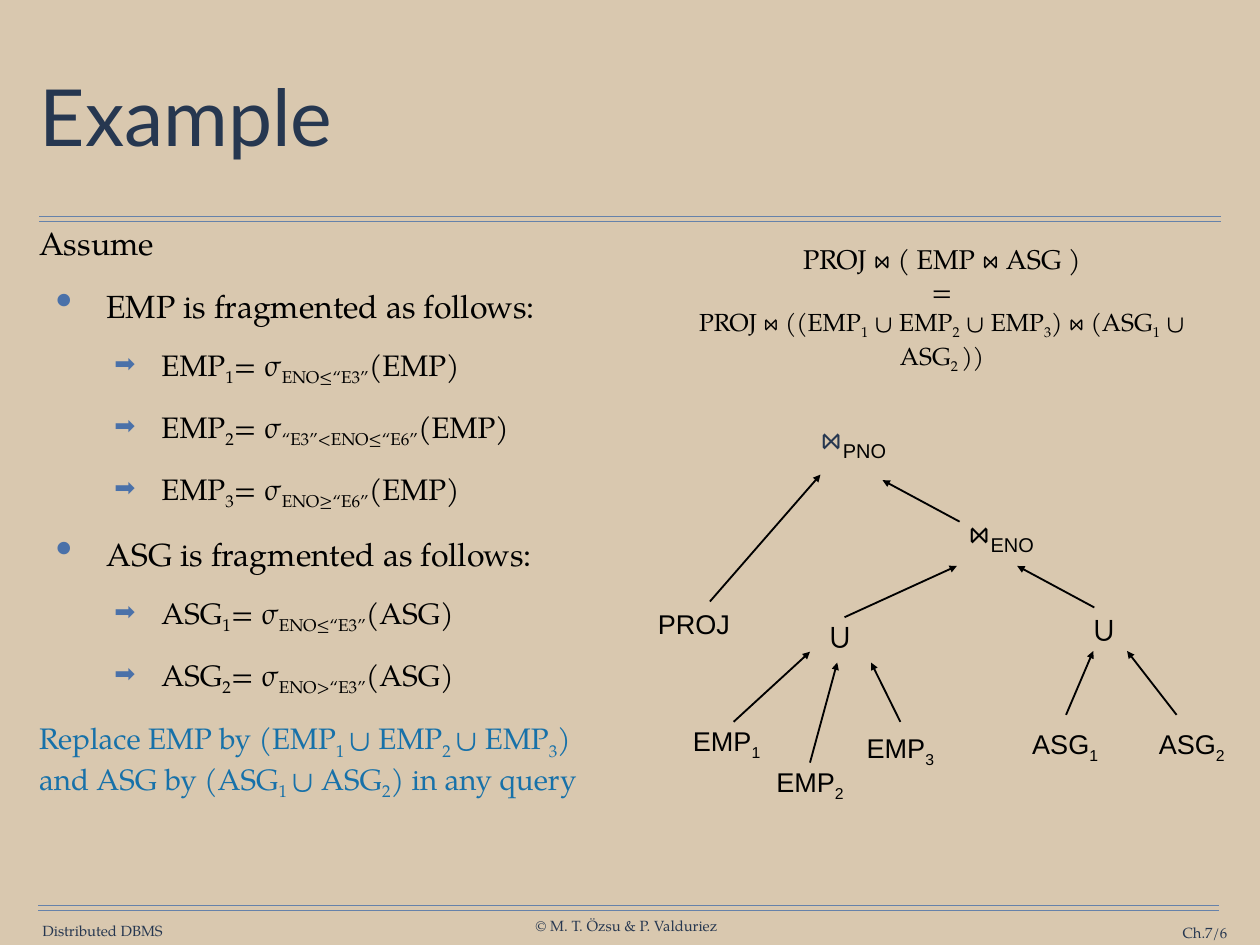
"""Build the slide on replacing relations by their fragments in a join query."""
from dataclasses import dataclass

from lxml import etree
from pptx import Presentation
from pptx.dml.color import RGBColor
from pptx.enum.shapes import MSO_CONNECTOR
from pptx.enum.text import MSO_ANCHOR, PP_ALIGN
from pptx.oxml.ns import qn
from pptx.util import Cm, Pt

LINE = MSO_CONNECTOR.STRAIGHT
TOP, MID = MSO_ANCHOR.TOP, MSO_ANCHOR.MIDDLE
LEFT, CENTER, RIGHT = PP_ALIGN.LEFT, PP_ALIGN.CENTER, PP_ALIGN.RIGHT


@dataclass(frozen=True)
class Theme:
    sand: str = "D9C8AF"
    navy: str = "263750"
    black: str = "000000"
    blue: str = "1771A9"
    mark: str = "4A71A9"
    rule: str = "6682AA"
    serif: str = "TeX Gyre Pagella"
    sans: str = "Arial"
    head: str = "Lato"
    title: int = 64
    join: int = 28
    body: int = 26
    item: int = 24
    label: int = 22
    small: int = 20
    foot: int = 12


theme = Theme()
deck = Presentation()
deck.slide_width, deck.slide_height = Cm(36.12), Cm(27.1)
slide = deck.slides.add_slide(deck.slide_layouts[6])
slide.background.fill.solid()
slide.background.fill.fore_color.rgb = RGBColor.from_string(theme.sand)


def add_box(x, y, w, h, pad=(0, 0), wrap=False, anchor=TOP):
    """Add a text box and return its frame."""
    frame = slide.shapes.add_textbox(Cm(x), Cm(y), Cm(w), Cm(h)).text_frame
    frame.margin_left = frame.margin_right = Cm(pad[0])
    frame.margin_top = frame.margin_bottom = Cm(pad[1])
    frame.word_wrap, frame.vertical_anchor = wrap, anchor
    return frame


def write(frame, text, size, font=theme.serif, color=theme.black, align=LEFT,
          space=None, before=0, after=0, bullet=None, sub=None):
    """Add a paragraph; parts between tildes are subscripts."""
    first = not frame.text
    para = frame.paragraphs[0] if first else frame.add_paragraph()
    para.alignment, para.line_spacing = align, space
    para.space_before, para.space_after = Pt(0 if first else before), Pt(after)
    if bullet:
        char, scale, left, hang = bullet
        props = para._p.get_or_add_pPr()
        props.set("marL", str(Cm(left)))
        props.set("indent", str(-Cm(hang)))
        tint = etree.SubElement(props, qn("a:buClr"))
        etree.SubElement(tint, qn("a:srgbClr"), val=theme.mark)
        etree.SubElement(props, qn("a:buSzPct"), val=str(scale * 1000))
        etree.SubElement(props, qn("a:buChar"), char=char)
    for i, part in enumerate(text.split("~")):
        if part:
            run = para.add_run()
            run.text = part
            face, tone = sub if sub and i % 2 else (font, color)
            run.font.name, run.font.size = face, Pt(size)
            run.font.color.rgb = RGBColor.from_string(tone)
            if i % 2:
                run._r.get_or_add_rPr().set("baseline", "-25000")


rules = [(x1, y, x2, y) for x1, x2, top in [(1.12, 35, 6.2), (1.09, 34.95, 25.96)]
         for y in (top, top + 0.15)]
arrows = [
    (27.51, 14.96, 25.3, 13.77),
    (31.37, 17.42, 29.16, 16.23),
    (24.21, 17.7, 27.43, 16.23),
    (20.35, 17.25, 23.52, 13.61),
    (23.22, 21.87, 24, 19),
    (21.03, 20.7, 23.22, 18.69),
    (25.81, 20.7, 24.97, 19),
    (33.73, 20.5, 32.31, 18.67),
    (30.56, 20.5, 31.34, 18.67),
]
for lines, color, width, tip in [(rules, theme.rule, 1, "none"),
                                 (arrows, theme.black, 1.5, "triangle")]:
    for ends in lines:
        link = slide.shapes.add_connector(LINE, *map(Cm, ends))
        link.line.color.rgb = RGBColor.from_string(color)
        link.line.width = Pt(width)
        etree.SubElement(link.line._get_or_add_ln(), qn("a:tailEnd"), type=tip)
        etree.SubElement(link._element.spPr, qn("a:effectLst"))

for text, x, y, w, align in [
    ("Distributed DBMS", 1.19, 26.44, 3.51, CENTER),
    ("© M. T. Özsu & P. Valduriez", 15.32, 26.29, 5.28, CENTER),
    ("Ch.7/6", 31.27, 26.49, 3.91, RIGHT),
]:
    foot = add_box(x, y, w, 0.51, wrap=align == RIGHT, anchor=MID)
    write(foot, text, theme.foot, color=theme.navy, align=align)

title = add_box(0.99, 1.24, 34.14, 4.47, (0.15, 0.15), True, MID)
write(title, "Example", theme.title, theme.head, theme.navy, space=0.9)

body = add_box(0.97, 6.15, 16.71, 19.3, (0.15, 0.15), True)
write(body, "Assume", theme.body, space=Pt(34.1), after=8.5)
for name, parts in [
    ("EMP", ["ENO≤“E3”", "“E3”<ENO≤“E6”", "ENO≥“E6”"]),
    ("ASG", ["ENO≤“E3”", "ENO>“E3”"]),
]:
    write(body, f"{name} is fragmented as follows:", theme.body,
          before=12, after=7.1, bullet=("•", 150, 1.93, 1.45))
    for n, test in enumerate(parts, 1):
        write(body, f"{name}~{n}~= σ~{test}~({name})", theme.item, space=Pt(31.3),
              before=12, after=7.1, bullet=("➡", 85, 3.51, 1.35))
write(body, "Replace EMP by (EMP~1 ~∪ EMP~2 ~∪ EMP~3~) and ASG by "
      "(ASG~1 ~∪ ASG~2~) in any query", theme.item, color=theme.blue, before=12)

query = add_box(18.47, 6.81, 17.07, 3, (0.8, 0.13), True)
for text, size in [
    ("PROJ ⋈ ( EMP ⋈ ASG )", theme.label),
    ("=", theme.label),
    ("PROJ ⋈ ((EMP~1~ ∪ EMP~2~ ∪ EMP~3~) ⋈ (ASG~1~ ∪ ASG~2 ~))", theme.small),
]:
    write(query, text, size, align=CENTER)

for text, x, y, w in [
    ("PROJ", 18.85, 17.4, 2.08),
    ("EMP~1", 19.84, 20.88, 1.98),
    ("EMP~2", 22.23, 22.07, 1.98),
    ("EMP~3", 24.82, 21.08, 1.98),
    ("ASG~1", 29.57, 20.98, 1.93),
    ("ASG~2", 33.2, 20.98, 1.93),
]:
    write(add_box(x, y, w, 0.89), text, theme.label, theme.sans,
          align=CENTER, space=Pt(27))

for text, x, y, w, font, color in [
    ("∪", 23.7, 17.7, 0.76, theme.sans, theme.black),
    ("∪", 31.27, 17.5, 0.76, theme.sans, theme.black),
    ("⋈~PNO", 23.22, 12.17, 2.49, theme.serif, theme.navy),
    ("⋈~ENO", 27.38, 14.86, 2.64, theme.serif, theme.black),
]:
    write(add_box(x, y, w, 1.12), text, theme.join, font, color, CENTER,
          Pt(31.3), sub=(theme.sans, theme.black))

deck.save("out.pptx")
